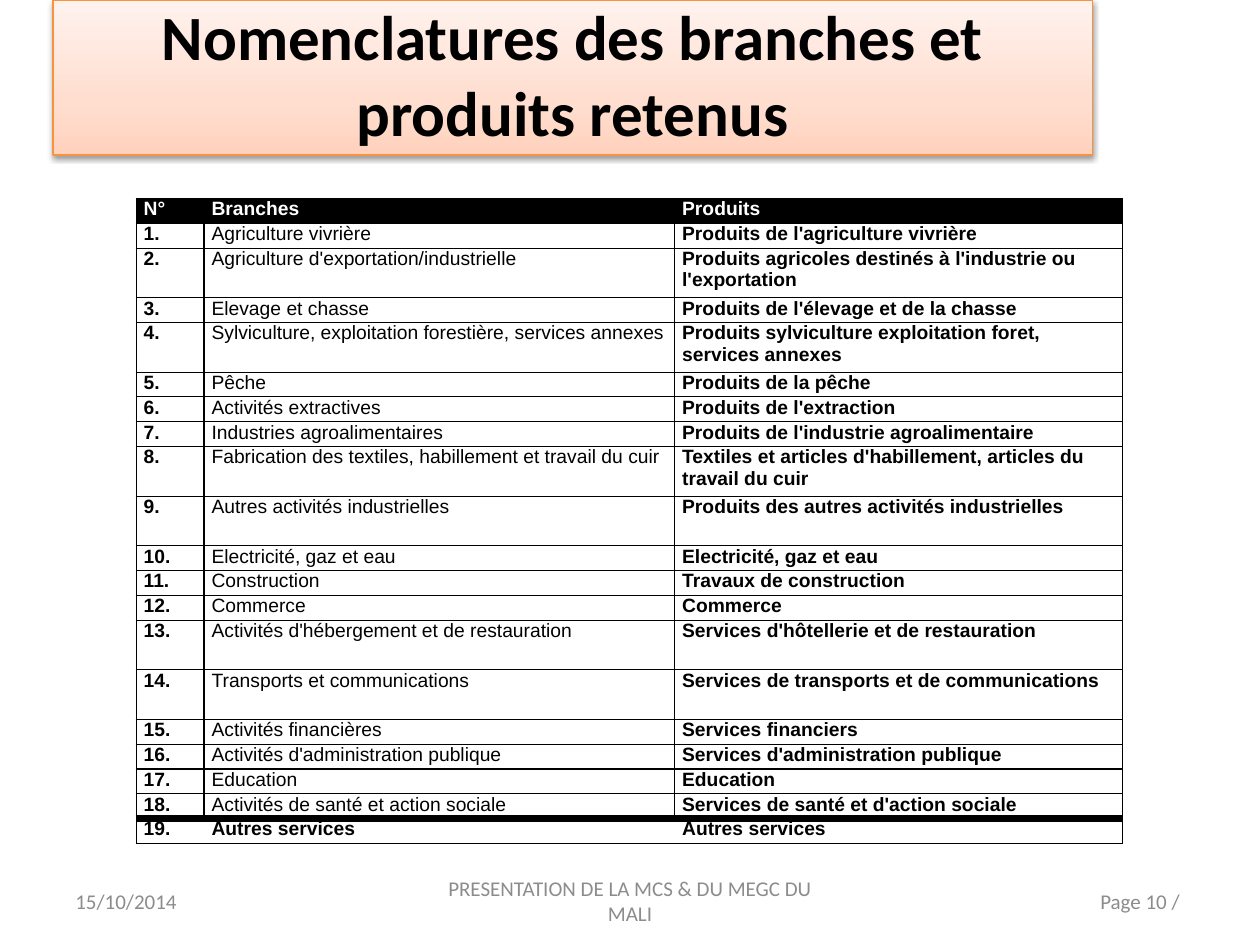
from lxml.etree import SubElement
from pptx import Presentation
from pptx.dml.color import RGBColor
from pptx.enum.text import MSO_ANCHOR, MSO_AUTO_SIZE, PP_ALIGN
from pptx.oxml.ns import qn
from pptx.util import Inches, Pt

BLACK = RGBColor(0x00, 0x00, 0x00)
WHITE = RGBColor(0xFF, 0xFF, 0xFF)
GREY = RGBColor(0x8C, 0x8C, 0x8C)
ORANGE = RGBColor(0xF6, 0x92, 0x40)
PEACH = RGBColor(0xFF, 0xD2, 0xBD)
LIGHT_PEACH = RGBColor(0xFF, 0xDE, 0xD0)
PALE_PEACH = RGBColor(0xFF, 0xF2, 0xED)

WIDTH, HEIGHT = Inches(10), Inches(7.5)
COLUMN_SHARES = (0.54, 3.74, 3.56)
TALL_ROWS = {2, 4, 8, 9, 13, 14}
THIN, THICK = Pt(0.75), Pt(4)

HEADINGS = ("N°", "Branches", "Produits")
SECTORS = [
    ("Agriculture vivrière", "Produits de l'agriculture vivrière"),
    ("Agriculture d'exportation/industrielle",
     "Produits agricoles destinés à l'industrie ou l'exportation"),
    ("Elevage et chasse", "Produits de l'élevage et de la chasse"),
    ("Sylviculture, exploitation forestière, services annexes",
     "Produits sylviculture exploitation foret, services annexes"),
    ("Pêche", "Produits de la pêche"),
    ("Activités extractives", "Produits de l'extraction"),
    ("Industries agroalimentaires", "Produits de l'industrie agroalimentaire"),
    ("Fabrication des textiles, habillement et travail du cuir",
     "Textiles et articles d'habillement, articles du travail du cuir"),
    ("Autres activités industrielles", "Produits des autres activités industrielles"),
    ("Electricité, gaz et eau", "Electricité, gaz et eau"),
    ("Construction", "Travaux de construction"),
    ("Commerce", "Commerce"),
    ("Activités d'hébergement et de restauration",
     "Services d'hôtellerie et de restauration"),
    ("Transports et communications", "Services de transports et de communications"),
    ("Activités financières", "Services financiers"),
    ("Activités d'administration publique", "Services d'administration publique"),
    ("Education", "Education"),
    ("Activités de santé et action sociale", "Services de santé et d'action sociale"),
    ("Autres services", "Autres services"),
]
FOOTERS = [
    ("15/10/2014", PP_ALIGN.LEFT, 0, 0.26),
    ("PRESENTATION DE LA MCS & DU MEGC DU MALI", PP_ALIGN.CENTER, 0.324, 0.352),
    ("Page 10 / ", PP_ALIGN.RIGHT, 0.74, 0.26),
]


def share_box(left, top, width, height):
    return (int(left * WIDTH), int(top * HEIGHT),
            int(width * WIDTH), int(height * HEIGHT))


def write(frame, text, font_name, size, color, bold=False, align=PP_ALIGN.LEFT):
    frame.text = text
    para = frame.paragraphs[0]
    para.alignment = align
    font = para.font
    font.name, font.size, font.bold = font_name, Pt(size), bold
    font.color.rgb = color


def add_color(parent, color):
    return SubElement(parent, qn("a:srgbClr"), val=str(color))


def add_gradient(properties, stops, angle):
    gradient = SubElement(properties, qn("a:gradFill"), rotWithShape="1")
    stop_list = SubElement(gradient, qn("a:gsLst"))
    for share, color in stops:
        add_color(SubElement(stop_list, qn("a:gs"), pos=str(share * 1000)), color)
    SubElement(gradient, qn("a:lin"), ang=str(angle * 60000), scaled="0")


def add_shadow(properties, blur, distance, angle, opacity):
    effects = SubElement(properties, qn("a:effectLst"))
    shadow = SubElement(effects, qn("a:outerShdw"), blurRad=str(Pt(blur)),
                        dist=str(Pt(distance)), dir=str(angle * 60000), rotWithShape="0")
    SubElement(add_color(shadow, BLACK), qn("a:alpha"), val=str(opacity * 1000))


def place_title(page, box):
    title = page.shapes.title
    title.left, title.top, title.width, title.height = box
    properties = title._element.spPr
    add_gradient(properties, [(0, PEACH), (35, LIGHT_PEACH), (100, PALE_PEACH)], 270)
    title.line.color.rgb = ORANGE
    title.line.width = THIN
    add_shadow(properties, blur=3.1, distance=1.6, angle=90, opacity=38)
    frame = title.text_frame
    write(frame, "Nomenclatures des branches et produits retenus",
          "Calibri", 36, BLACK, True, PP_ALIGN.CENTER)
    frame.word_wrap = True
    frame.auto_size = MSO_AUTO_SIZE.NONE
    frame.vertical_anchor = MSO_ANCHOR.BOTTOM


def set_borders(cell, **widths):
    properties = cell._tc.get_or_add_tcPr()
    for side in "LRTB":
        width = widths[side]
        line = SubElement(properties, qn(f"a:ln{side}"), w=str(width))
        if width:
            add_color(SubElement(line, qn("a:solidFill")), BLACK)
        else:
            SubElement(line, qn("a:noFill"))


def place_table(page, box):
    rows = [HEADINGS] + [(f"{number}.", *sector)
                         for number, sector in enumerate(SECTORS, 1)]
    last_row, last_column = len(rows) - 1, len(HEADINGS) - 1
    table = page.shapes.add_table(len(rows), len(HEADINGS), *box).table
    table.first_row = table.horz_banding = False

    for column, share in zip(table.columns, COLUMN_SHARES):
        column.width = int(box[2] * share / sum(COLUMN_SHARES))
    unit = box[3] / (len(rows) + len(TALL_ROWS))

    for r, texts in enumerate(rows):
        table.rows[r].height = int(unit * (2 if r in TALL_ROWS else 1))
        is_header, is_last = r == 0, r == last_row
        inner = 0 if is_last else THIN
        for c, text in enumerate(texts):
            cell = table.cell(r, c)
            cell.margin_left = cell.margin_right = Inches(0.06)
            cell.margin_top = cell.margin_bottom = 0
            set_borders(cell,
                        L=THIN if c == 0 else inner,
                        R=THIN if c == last_column else inner,
                        T=THICK if is_last else THIN,
                        B=THICK if r == last_row - 1 else THIN)
            if is_header:
                cell.fill.solid()
                cell.fill.fore_color.rgb = BLACK
            else:
                cell.fill.background()
            write(cell.text_frame, text, "Arial", 11, WHITE if is_header else BLACK,
                  bold=c != 1 or is_header or is_last)


def place_footers(page, box):
    left, top, width, height = box
    for text, align, start, share in FOOTERS:
        footer = page.shapes.add_textbox(int(left + start * width), top,
                                         int(share * width), height)
        frame = footer.text_frame
        frame.word_wrap = True
        frame.vertical_anchor = MSO_ANCHOR.MIDDLE
        write(frame, text, "Calibri", 12, GREY, align=align)


def main():
    deck = Presentation()
    deck.slide_width, deck.slide_height = WIDTH, HEIGHT
    page = deck.slides.add_slide(deck.slide_layouts.get_by_name("Title Only"))
    place_table(page, share_box(0.108, 0.21, 0.783, 0.683))
    place_title(page, share_box(0.042, 0, 0.825, 0.164))
    place_footers(page, share_box(0.05, 0.927, 0.9, 0.053))
    deck.save("out.pptx")


if __name__ == "__main__":
    main()
